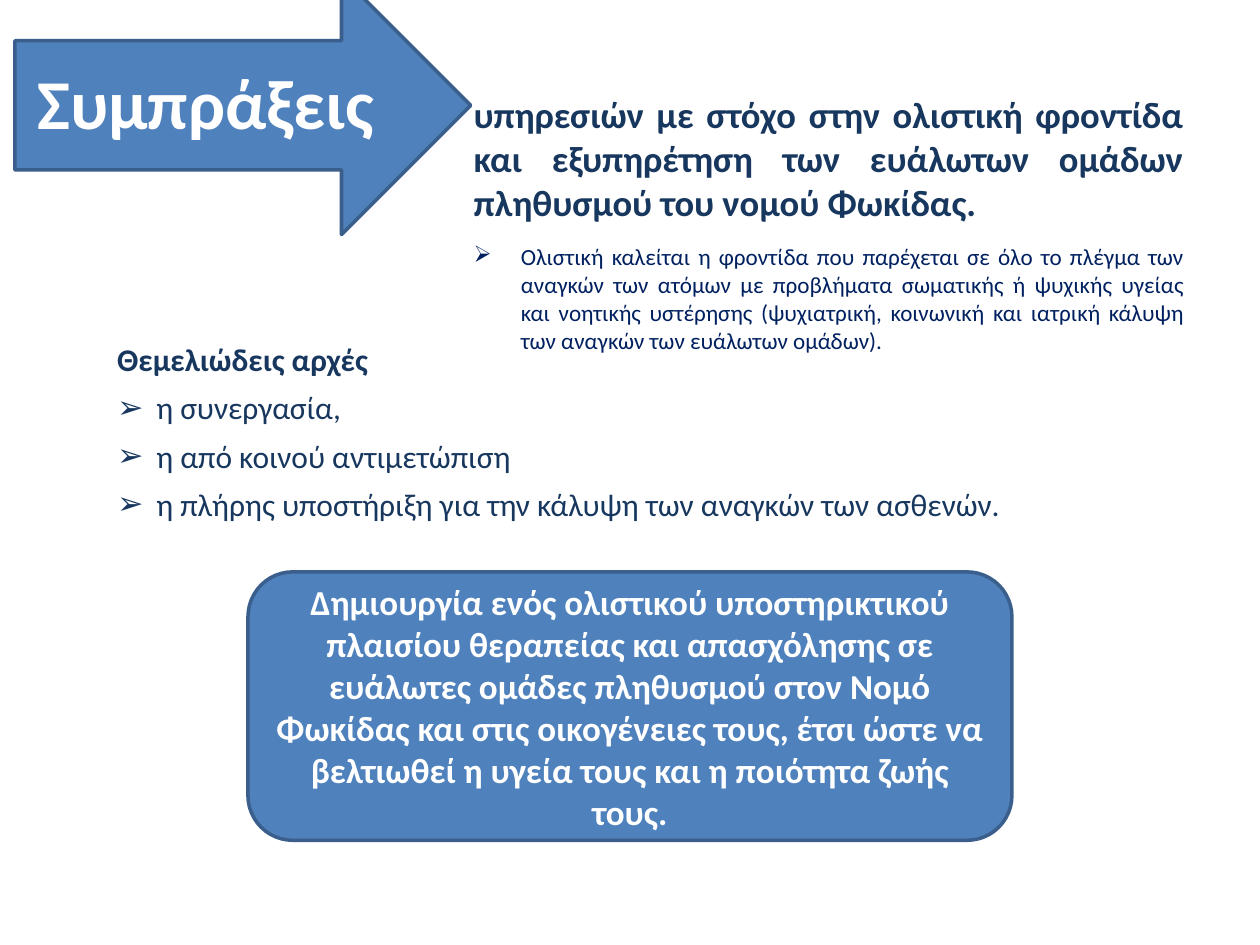
from lxml.etree import SubElement
from pptx import Presentation
from pptx.dml.color import RGBColor
from pptx.enum.shapes import MSO_SHAPE
from pptx.enum.text import MSO_ANCHOR, MSO_AUTO_SIZE, PP_ALIGN
from pptx.oxml.ns import qn
from pptx.util import Cm, Pt

FONT = "Calibri"
BLUE, OUTLINE = "4F81BD", "3A5F8C"
NAVY, DARK_BLUE, WHITE = "17375E", "002060", "FFFFFF"

PRINCIPLES = [
    "η συνεργασία,",
    "η από κοινού αντιμετώπιση",
    "η πλήρης υποστήριξη για την κάλυψη των αναγκών των ασθενών.",
]
SERVICES = (
    "υπηρεσιών με στόχο στην ολιστική φροντίδα και εξυπηρέτηση των "
    "ευάλωτων ομάδων πληθυσμού του νομού Φωκίδας."
)
HOLISTIC_CARE = (
    "Ολιστική καλείται η φροντίδα που παρέχεται σε όλο το πλέγμα των "
    "αναγκών των ατόμων με προβλήματα σωματικής ή ψυχικής υγείας και "
    "νοητικής υστέρησης (ψυχιατρική, κοινωνική και ιατρική κάλυψη των "
    "αναγκών των ευάλωτων ομάδων)."
)
GOAL = (
    "Δημιουργία ενός ολιστικού υποστηρικτικού πλαισίου θεραπείας και "
    "απασχόλησης σε ευάλωτες ομάδες πληθυσμού στον Νομό Φωκίδας και στις "
    "οικογένειες τους, έτσι ώστε να βελτιωθεί η υγεία τους και η ποιότητα "
    "ζωής τους."
)


def color(value):
    return RGBColor.from_string(value)


def set_bullet(paragraph, bullet, indent):
    """Give the paragraph a hanging bullet, or none when bullet is None."""
    properties = paragraph._p.get_or_add_pPr()
    properties.set("marL", str(indent))
    properties.set("indent", str(-indent))
    if bullet:
        SubElement(properties, qn("a:buChar"), char=bullet)
    else:
        SubElement(properties, qn("a:buNone"))


def write(frame, text, size=18, fill=NAVY, bold=False, align=PP_ALIGN.LEFT,
          before=0, after=0, bullet=None, indent=Cm(0)):
    """Write text into the empty first paragraph, or into a new one."""
    first = frame.paragraphs[0]
    paragraph = frame.add_paragraph() if first.runs else first
    set_bullet(paragraph, bullet, indent)
    paragraph.alignment = align
    paragraph.space_before, paragraph.space_after = Pt(before), Pt(after)
    run = paragraph.add_run()
    run.text = text
    run.font.name, run.font.size, run.font.bold = FONT, Pt(size), bold
    run.font.color.rgb = color(fill)


def place(shape, left, top, width, height):
    shape.left, shape.top = Cm(left), Cm(top)
    shape.width, shape.height = Cm(width), Cm(height)


def prepare_frame(shape, anchor=MSO_ANCHOR.TOP):
    frame = shape.text_frame
    frame.word_wrap = True
    frame.auto_size = MSO_AUTO_SIZE.NONE
    frame.vertical_anchor = anchor
    return frame


def add_panel(slide, kind, left, top, width, height):
    shape = slide.shapes.add_shape(
        kind, Cm(left), Cm(top), Cm(width), Cm(height))
    shape.shadow.inherit = False
    shape.fill.solid()
    shape.fill.fore_color.rgb = color(BLUE)
    shape.line.color.rgb = color(OUTLINE)
    shape.line.width = Pt(2)
    return shape


def add_title_arrow(slide):
    arrow = add_panel(slide, MSO_SHAPE.RIGHT_ARROW, 0.3, -0.48, 9.19, 5.21)
    title = slide.shapes.title
    place(title, 0.5, 0.56, 25.4, 2.97)
    write(prepare_frame(title, MSO_ANCHOR.MIDDLE), "Συμπράξεις",
          size=40, fill=WHITE, bold=True)
    arrow.element.addnext(title.element)


def fill_principles(slide):
    body = slide.placeholders[1]
    place(body, 1.27, 6.73, 22.86, 4.6)
    frame = prepare_frame(body)
    frame.margin_left = Cm(1.09)
    write(frame, "Θεμελιώδεις αρχές", bold=True, after=6)
    for principle in PRINCIPLES:
        write(frame, principle, after=6, bullet="➢", indent=Cm(0.79))


def add_services(slide):
    box = slide.shapes.add_textbox(Cm(9.3), Cm(1.73), Cm(14.81), Cm(5.41))
    frame = prepare_frame(box)
    write(frame, SERVICES, size=20.9, bold=True, align=PP_ALIGN.JUSTIFY)
    write(frame, HOLISTIC_CARE, size=13.2, fill=DARK_BLUE, before=11,
          align=PP_ALIGN.JUSTIFY, bullet="➢", indent=Cm(0.95))


def add_goal(slide):
    panel = add_panel(
        slide, MSO_SHAPE.ROUNDED_RECTANGLE, 5, 11.53, 15.4, 5.41)
    write(prepare_frame(panel, MSO_ANCHOR.MIDDLE), GOAL, size=20,
          fill=WHITE, bold=True, align=PP_ALIGN.CENTER)


def main():
    presentation = Presentation()
    presentation.slide_width = Cm(25.4)
    presentation.slide_height = Cm(19.05)
    slide = presentation.slides.add_slide(presentation.slide_layouts[1])
    fill_principles(slide)
    add_title_arrow(slide)
    add_services(slide)
    add_goal(slide)
    presentation.save("out.pptx")


if __name__ == "__main__":
    main()
